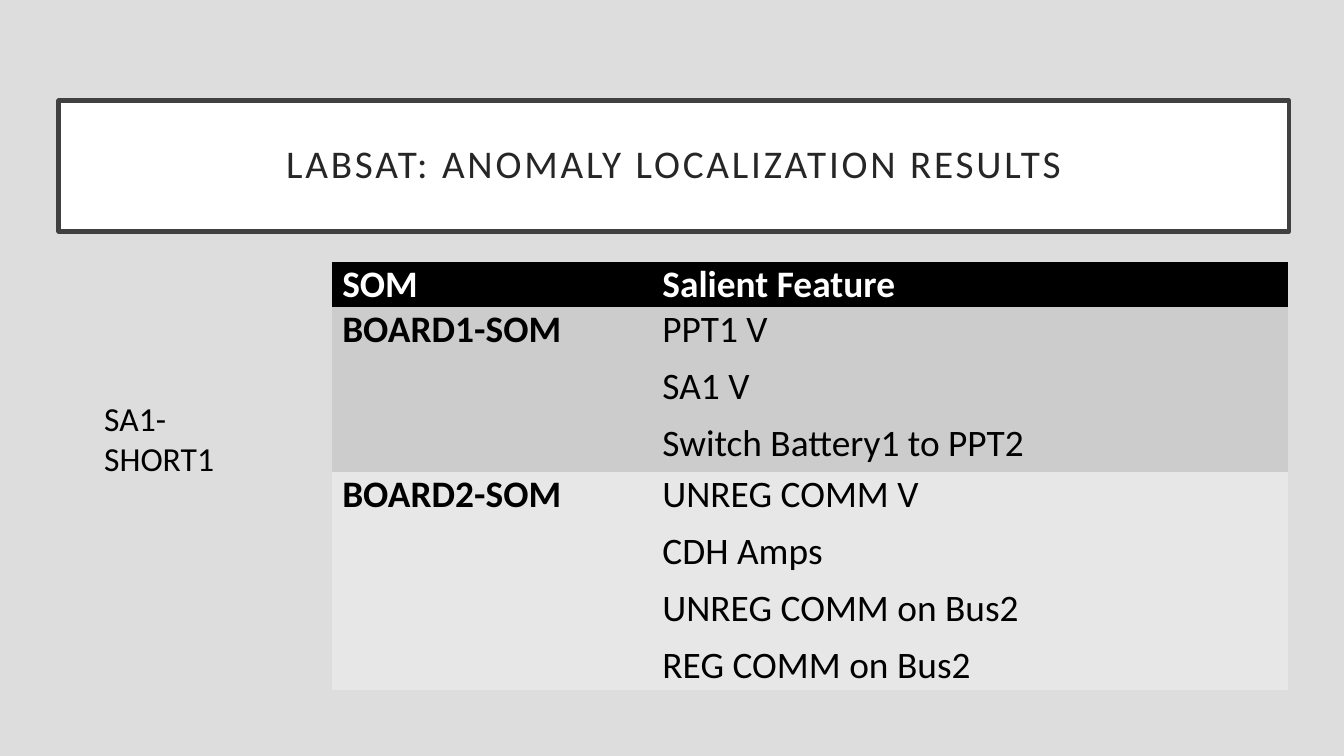
from pptx import Presentation
from pptx.dml.color import RGBColor
from pptx.enum import text
from pptx.util import Pt

FONT = "Calibri"
BLACK = RGBColor(0x00, 0x00, 0x00)
WHITE = RGBColor(0xFF, 0xFF, 0xFF)
BACKGROUND = RGBColor(0xDD, 0xDD, 0xDD)
FRAME = RGBColor(0x40, 0x40, 0x40)
TITLE_INK = RGBColor(0x26, 0x26, 0x26)
BAND_DARK = RGBColor(0xCC, 0xCC, 0xCC)
BAND_LIGHT = RGBColor(0xE7, 0xE7, 0xE7)
NO_STYLE = "{2D5ABB26-0587-4C30-8999-92F81FD0307C}"

# Each row: height, fill, ink, board, salient features
ROWS = [
    (24, BLACK, WHITE, "SOM", ["Salient Feature"]),
    (88.5, BAND_DARK, BLACK, "BOARD1-SOM",
     ["PPT1 V", "SA1 V", "Switch Battery1 to PPT2"]),
    (116.5, BAND_LIGHT, BLACK, "BOARD2-SOM",
     ["UNREG COMM V", "CDH Amps", "UNREG COMM on Bus2", "REG COMM on Bus2"]),
]


def place(shape, box):
    shape.left, shape.top, shape.width, shape.height = map(Pt, box)


def style(para, size, color, bold=False):
    para.font.name = FONT
    para.font.size = Pt(size)
    para.font.color.rgb = color
    para.font.bold = bold


def add_title(page, box, words):
    title = page.shapes.title
    place(title, box)
    title.fill.solid()
    title.fill.fore_color.rgb = WHITE
    title.line.color.rgb = FRAME
    title.line.width = Pt(2.5)

    frame = title.text_frame
    frame.text = words
    frame.word_wrap = True
    frame.auto_size = text.MSO_AUTO_SIZE.NONE
    frame.vertical_anchor = text.MSO_ANCHOR.MIDDLE
    frame.margin_left = frame.margin_right = Pt(14.4)
    frame.margin_top = frame.margin_bottom = Pt(14.4)
    para = frame.paragraphs[0]
    para.alignment = text.PP_ALIGN.CENTER
    para.line_spacing = 0.9
    style(para, 21, TITLE_INK)
    # Letter spacing, in hundredths of a point
    para.runs[0].font._element.set("spc", "150")


def add_case_label(page, box, words):
    label = page.shapes.add_textbox(*map(Pt, box))
    frame = label.text_frame
    frame.word_wrap = True
    frame.text = words
    style(frame.paragraphs[0], 18, BLACK)


def fill_cell(cell, lines, fill, ink, bold, gap):
    cell.fill.solid()
    cell.fill.fore_color.rgb = fill
    cell.margin_left = cell.margin_right = Pt(5.4)
    cell.margin_top = cell.margin_bottom = 0
    cell.text = "\n".join(lines)
    for para in cell.text_frame.paragraphs:
        style(para, 20, ink, bold)
        para.space_after = Pt(gap)


def add_results(page, box):
    left, top, width, height = map(Pt, box)
    table = page.shapes.add_table(len(ROWS), 2, left, top, width, height).table
    table._tbl.tblPr.find("{*}tableStyleId").text = NO_STYLE
    table.horz_banding = False
    table.columns[0].width = Pt(171.5)
    table.columns[1].width = width - Pt(171.5)

    for index, (row_height, fill, ink, board, features) in enumerate(ROWS):
        header = index == 0
        table.rows[index].height = Pt(row_height)
        fill_cell(table.cell(index, 0), [board], fill, ink, True, 0)
        fill_cell(table.cell(index, 1), features, fill, ink, header,
                  0 if header else 6)


def main():
    deck = Presentation()
    deck.slide_width, deck.slide_height = Pt(720), Pt(405)
    page = deck.slides.add_slide(deck.slide_layouts[5])
    page.background.fill.solid()
    page.background.fill.fore_color.rgb = BACKGROUND

    add_title(page, (31.5, 54, 659, 70), "LABSAT: ANOMALY LOCALIZATION RESULTS")
    add_case_label(page, (48.75, 209.5, 102, 51), "SA1-SHORT1")
    add_results(page, (178, 140.4, 512, 229))
    deck.save("out.pptx")


if __name__ == "__main__":
    main()
